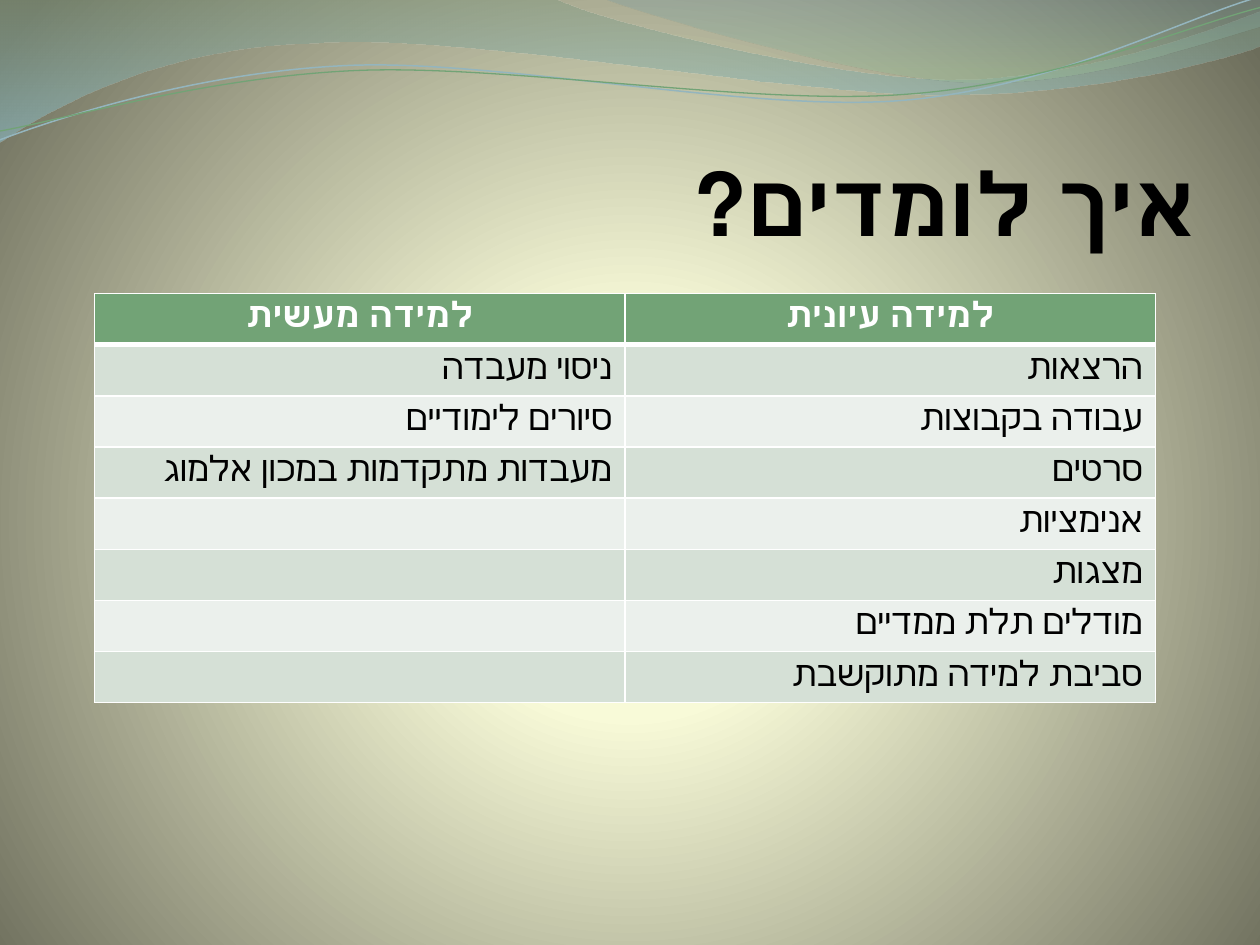
from dataclasses import dataclass

from lxml import etree
from pptx import Presentation
from pptx.dml.color import RGBColor
from pptx.enum.text import MSO_ANCHOR, PP_ALIGN
from pptx.oxml import parse_xml
from pptx.oxml.ns import nsdecls, qn
from pptx.util import Inches, Pt

RIGHT, CENTER = PP_ALIGN.RIGHT, PP_ALIGN.CENTER
BOTTOM = MSO_ANCHOR.BOTTOM


@dataclass(frozen=True)
class Theme:
    title_font: str = "Calibri"
    table_font: str = "DejaVu Sans"
    title_size: int = 50
    table_size: int = 20
    text: str = "000000"
    white: str = "FFFFFF"
    header: str = "72A376"
    bands: tuple = ("D5E0D6", "EBF0EC")


THEME = Theme()

# Content
TITLE = "איך לומדים?"
HEADERS = ("למידה מעשית", "למידה עיונית")
PRACTICAL = ["ניסוי מעבדה", "סיורים לימודיים", "מעבדות מתקדמות במכון אלמוג"]
THEORETICAL = ["הרצאות", "עבודה בקבוצות", "סרטים", "אנימציות", "מצגות",
               "מודלים תלת ממדיים", "סביבת למידה מתוקשבת"]

# Gradient stops: position %, colour, opacity %
BACKGROUND = [(0, "FBFED6", 100), (25, "F8FAD8", 100), (100, "6C6D5B", 100)]
GLOW = ('<a:path path="circle"><a:fillToRect l="10000" t="110000" '
        'r="10000" b="100000"/></a:path>')
DOWNWARD = '<a:lin ang="5400000" scaled="0"/>'

# Waves: a start point, then segments of one point (line) or three (curve)
BANDS = [
    ([(0, "809980", 45), (100, "8DC1CF", 55)],
     [(0, 0), [(4.4, -0.01)],
      [(4.76, 0.17), (6.64, 0.63), (7.58, 0.63)],
      [(8.53, 0.63), (9.58, 0.26), (10, 0.09)], [(10.01, 0.36)],
      [(9.83, 0.44), (8.7, 0.76), (7.46, 0.75)],
      [(6.22, 0.75), (3.82, 0.28), (2.57, 0.34)],
      [(1.29, 0.36), (0.46, 0.83), (-0.01, 1.13)]]),
    ([(0, "779BA4", 30), (80, "96B996", 45)],
     [(4.79, -0.01), [(5.09, 0.11), (6.82, 0.62), (7.69, 0.65)],
      [(8.56, 0.69), (9.61, 0.32), (10, 0.21)], [(10, 0)]]),
]
STRANDS = [
    ("94B5BE", 0.85,
     [(0, 1.11), [(0.48, 0.93), (1.58, 0.57), (2.77, 0.52)],
      [(3.95, 0.47), (5.93, 0.89), (7.13, 0.8)],
      [(8.33, 0.71), (9.38, 0.15), (9.98, -0.02)]]),
    ("72A376", 0.75,
     [(0, 1.04), [(0.47, 0.96), (1.64, 0.61), (2.83, 0.56)],
      [(4.03, 0.51), (5.97, 0.84), (7.17, 0.75)],
      [(8.36, 0.67), (9.41, 0.21), (10, 0.06)]]),
]


def gradient(stops, direction):
    marks = "".join(
        f'<a:gs pos="{pos * 1000}"><a:srgbClr val="{color}">'
        f'<a:alpha val="{opacity * 1000}"/></a:srgbClr></a:gs>'
        for pos, color, opacity in stops)
    return parse_xml(f'<a:gradFill {nsdecls("a")} rotWithShape="1">'
                     f'<a:gsLst>{marks}</a:gsLst>{direction}</a:gradFill>')


def add_wave(slide, outline, close):
    start, *segments = outline
    points = [(Inches(x), Inches(y)) for part in segments for x, y in part]
    builder = slide.shapes.build_freeform(Inches(start[0]), Inches(start[1]))
    builder.add_line_segments(points, close=close)
    wave = builder.convert_to_shape()
    wave.shadow.inherit = False

    # Join each run of three lines into one Bezier curve
    lines = iter(list(wave._element.iter(qn("a:lnTo"))))
    for part in segments:
        joined = [next(lines) for _ in part]
        if len(part) == 3:
            curve = etree.Element(qn("a:cubicBezTo"))
            joined[0].addprevious(curve)
            for line in joined:
                curve.append(line[0])
                line.getparent().remove(line)
    return wave


def format_text(paragraph, font_name, size, color, bold, align):
    paragraph.alignment = align
    for run in paragraph.runs:
        font = run.font
        font.name, font.size, font.bold = font_name, Pt(size), bold
        font.color.rgb = RGBColor.from_string(color)


def set_borders(cell, bottom):
    widths = {"L": 1, "R": 1, "T": 1, "B": bottom}
    for place, (side, width) in enumerate(widths.items()):
        cell._tc.get_or_add_tcPr().insert(place, parse_xml(
            f'<a:ln{side} {nsdecls("a")} w="{Pt(width)}"><a:solidFill>'
            f'<a:srgbClr val="{THEME.white}"/></a:solidFill></a:ln{side}>'))


def add_waves(slide):
    for stops, outline in BANDS:
        band = add_wave(slide, outline, True)
        band.line.fill.background()
        band.fill.background()
        no_fill = band._element.spPr.find(qn("a:noFill"))
        no_fill.getparent().replace(no_fill, gradient(stops, DOWNWARD))
    for color, width, outline in STRANDS:
        strand = add_wave(slide, outline, False)
        strand.fill.background()
        strand.line.color.rgb = RGBColor.from_string(color)
        strand.line.width = Pt(width)


def place_title(slide):
    title = slide.shapes.title
    slide.shapes._spTree.append(title._element)  # in front of the waves
    title.left, title.top = Inches(0.5), Inches(0.77)
    title.width, title.height = Inches(9), Inches(1.25)
    frame = title.text_frame
    frame.text = TITLE
    frame.vertical_anchor = BOTTOM
    frame.margin_left = frame.margin_right = frame.margin_bottom = 0
    frame.margin_top = Inches(0.05)
    paragraph = frame.paragraphs[0]
    format_text(paragraph, THEME.title_font, THEME.title_size, THEME.text,
                True, RIGHT)
    paragraph._p.get_or_add_pPr().set("rtl", "1")


def add_learning_table(slide):
    row_count = len(THEORETICAL) + 1
    padded = PRACTICAL + [""] * (len(THEORETICAL) - len(PRACTICAL))
    rows = [HEADERS, *zip(padded, THEORETICAL)]
    table = slide.shapes.add_table(
        row_count, len(HEADERS), Inches(0.75), Inches(2.33),
        Inches(8.42), Inches(3.25)).table
    for r, row in enumerate(rows):
        is_header = r == 0
        fill = THEME.header if is_header else THEME.bands[(r - 1) % 2]
        for c, words in enumerate(row):
            cell = table.cell(r, c)
            cell.fill.solid()
            cell.fill.fore_color.rgb = RGBColor.from_string(fill)
            set_borders(cell, 3 if is_header else 1)
            if words:
                cell.text_frame.text = words
                format_text(cell.text_frame.paragraphs[0], THEME.table_font,
                            THEME.table_size,
                            THEME.white if is_header else THEME.text,
                            is_header, CENTER if is_header else RIGHT)


def main():
    deck = Presentation()
    deck.slide_width, deck.slide_height = Inches(10), Inches(7.5)
    slide = deck.slides.add_slide(deck.slide_layouts[5])

    # Background glow
    slide.background.fill.solid()
    solid = slide._element.cSld.find(".//" + qn("a:solidFill"))
    solid.getparent().replace(solid, gradient(BACKGROUND, GLOW))

    add_waves(slide)
    place_title(slide)
    add_learning_table(slide)
    deck.save("out.pptx")


if __name__ == "__main__":
    main()
